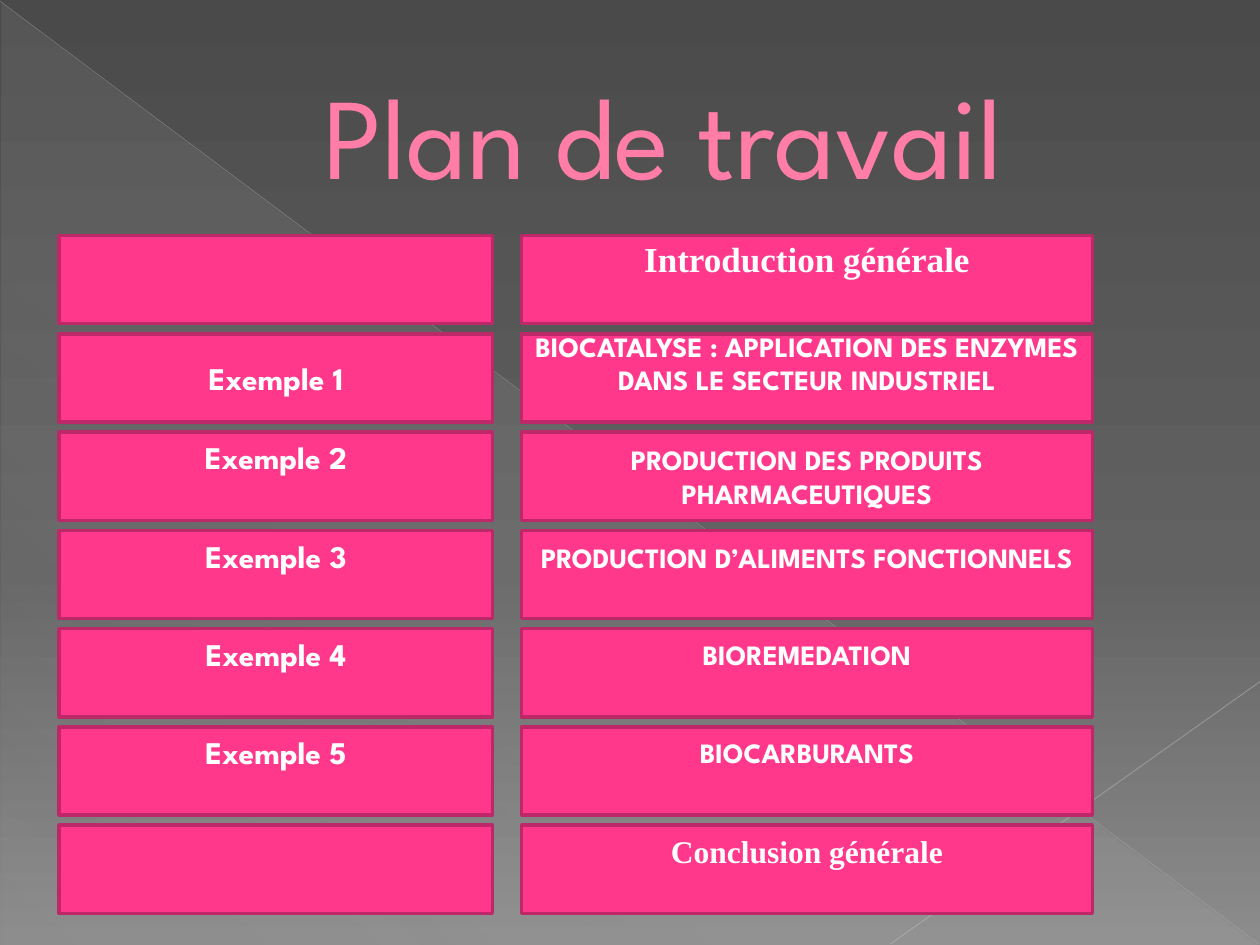
import pptx
import pptx.dml.color
import pptx.enum.shapes
import pptx.enum.text
import pptx.oxml
import pptx.oxml.ns
import pptx.oxml.xmlchemy
import pptx.util
from pptx.util import Inches

RGBColor = pptx.dml.color.RGBColor
Shape = pptx.enum.shapes.MSO_SHAPE
qn = pptx.oxml.ns.qn
new_element = pptx.oxml.xmlchemy.OxmlElement

WHITE = RGBColor(0xFF, 0xFF, 0xFF)
PINK = RGBColor(0xFF, 0x38, 0x8C)
DARK_PINK = RGBColor(0xBD, 0x29, 0x68)
TITLE_PINK = RGBColor(0xFF, 0x7D, 0xA7)
TITLE_EDGE = RGBColor(0xB1, 0x27, 0x61)
CHARCOAL = RGBColor(0x4A, 0x4A, 0x4A)
GRAY = RGBColor(0x62, 0x62, 0x62)
LIGHT_GRAY = RGBColor(0x8C, 0x8C, 0x8C)
VEIL = RGBColor(0xD2, 0xD2, 0xD2)
RAY = RGBColor(0xBF, 0xBF, 0xBF)
PALE_RAY = RGBColor(0xC6, 0xC6, 0xC6)

SPARTAN = "League Spartan"
TIMES = "Times New Roman"

FIRST_TOP, ROW_STEP, ROW_HEIGHT = 1.87, 0.78, 0.7
LABEL_LEFT, LABEL_WIDTH = 0.47, 3.44
TOPIC_LEFT, TOPIC_WIDTH = 4.14, 4.53
INSET = 0.05

LABEL = dict(size=18, lift=0.3)
TOPIC = dict(size=16, lift=0.3)
ROWS = [
    ("", {}, "Introduction générale", dict(size=20, font=TIMES, lift=0.33)),
    ("Exemple 1", dict(size=18),
     "BIOCATALYSE\u00a0: APPLICATION DES ENZYMES DANS LE SECTEUR INDUSTRIEL",
     dict(size=16, lift=0.24)),
    ("Exemple 2", LABEL, "PRODUCTION DES PRODUITS PHARMACEUTIQUES", dict(size=16)),
    ("Exemple 3", LABEL, "PRODUCTION D’ALIMENTS FONCTIONNELS", dict(size=16, lift=0.27)),
    ("Exemple 4", LABEL, "BIOREMEDATION", TOPIC),
    ("Exemple 5", LABEL, "BIOCARBURANTS", TOPIC),
    ("", {}, "Conclusion générale", dict(size=18, font=TIMES, lift=0.3)),
]


def set_gradient(properties, stops, angle):
    stop_xml = "".join(
        f'<a:gs pos="{position * 1000}"><a:srgbClr val="{color}">'
        f'<a:alpha val="{opacity * 1000}"/></a:srgbClr></a:gs>'
        for position, color, opacity in stops
    )
    gradient = pptx.oxml.parse_xml(
        f'<a:gradFill {pptx.oxml.ns.nsdecls("a")} rotWithShape="1">'
        f'<a:gsLst>{stop_xml}</a:gsLst><a:lin ang="{angle * 60000}" scaled="0"/></a:gradFill>'
    )
    properties.replace(properties.find(qn("a:solidFill")), gradient)


def paint_background(page):
    page.background.fill.solid()
    properties = next(page.element.iter(qn("p:bgPr")))
    stops = [(0, CHARCOAL, 100), (60, GRAY, 100), (100, LIGHT_GRAY, 100)]
    set_gradient(properties, stops, 90)


def add_veil(page):
    veil = page.shapes.add_shape(
        Shape.RIGHT_TRIANGLE, Inches(0.01), Inches(0.02), Inches(9.98), Inches(7.48))
    veil.shadow.inherit = False
    veil.line.fill.background()
    veil.fill.solid()
    set_gradient(veil.element.spPr, [(0, VEIL, 10), (70, VEIL, 8), (100, VEIL, 1)], 133)


def add_ray(page, start, end, color, width, opacity):
    ray = page.shapes.add_connector(
        pptx.enum.shapes.MSO_CONNECTOR.STRAIGHT, *map(Inches, start + end))
    ray.line.color.rgb = color
    ray.line.width = pptx.util.Pt(width)
    properties = ray.element.spPr
    alpha = new_element("a:alpha")
    alpha.set("val", str(opacity * 1000))
    next(properties.iter(qn("a:srgbClr"))).append(alpha)
    properties.append(new_element("a:effectLst"))


def write_text(box, text, size, font=SPARTAN, color=WHITE, bold=True, lift=0):
    frame = box.text_frame
    frame.word_wrap = True
    frame.vertical_anchor = pptx.enum.text.MSO_ANCHOR.MIDDLE
    frame.margin_top = Inches(INSET)
    frame.margin_bottom = Inches(INSET + lift)
    para = frame.paragraphs[0]
    para.alignment = pptx.enum.text.PP_ALIGN.CENTER
    span = para.add_run()
    span.text = text
    span.font.size = pptx.util.Pt(size)
    span.font.name = font
    span.font.bold = bold
    span.font.color.rgb = color
    return span


def add_title(page):
    box = page.shapes.add_textbox(Inches(0.5), Inches(0.29), Inches(9), Inches(1.53))
    span = write_text(box, "Plan de travail", size=66, color=TITLE_PINK, bold=False)
    box.text_frame.margin_left = Inches(0.63)
    edge = pptx.oxml.parse_xml(
        f'<a:ln {pptx.oxml.ns.nsdecls("a")} w="6350"><a:solidFill>'
        f'<a:srgbClr val="{TITLE_EDGE}"/></a:solidFill></a:ln>'
    )
    span.font._element.insert(0, edge)


def add_cell(page, left, top, width, text, style):
    cell = page.shapes.add_shape(
        Shape.RECTANGLE, Inches(left), Inches(top), Inches(width), Inches(ROW_HEIGHT))
    cell.shadow.inherit = False
    cell.fill.solid()
    cell.fill.fore_color.rgb = PINK
    cell.line.color.rgb = DARK_PINK
    cell.line.width = pptx.util.Pt(2)
    if text:
        write_text(cell, text, **style)


def main():
    deck = pptx.Presentation()
    deck.slide_width, deck.slide_height = Inches(10), Inches(7.5)
    page = deck.slides.add_slide(deck.slide_layouts[6])
    paint_background(page)
    add_veil(page)
    add_ray(page, (0, 0.01), (9.99, 7.49), RAY, 0.39, 35)
    add_ray(page, (10, 5.41), (7.07, 7.49), PALE_RAY, 0.47, 45)
    add_title(page)
    for index, (label, label_style, topic, topic_style) in enumerate(ROWS):
        top = FIRST_TOP + index * ROW_STEP
        add_cell(page, LABEL_LEFT, top, LABEL_WIDTH, label, label_style)
        add_cell(page, TOPIC_LEFT, top, TOPIC_WIDTH, topic, topic_style)
    deck.save("out.pptx")


if __name__ == "__main__":
    main()
